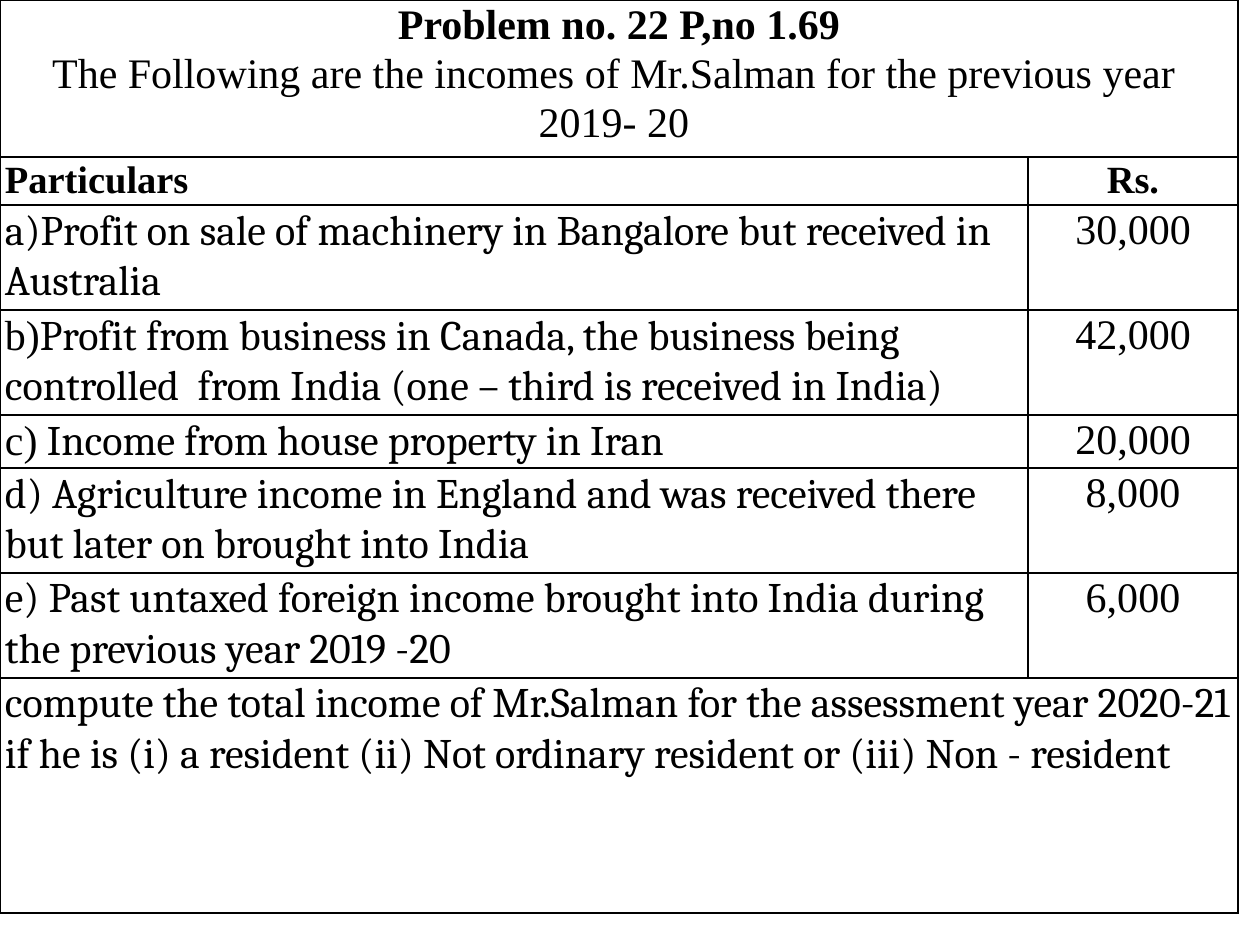
"""Build a slide with an income tax problem set out as a ruled table."""
from dataclasses import dataclass

from lxml import etree
from pptx import Presentation
from pptx.dml.color import RGBColor
from pptx.enum.text import PP_ALIGN
from pptx.oxml.ns import qn
from pptx.util import Pt

LEFT, CENTER = PP_ALIGN.LEFT, PP_ALIGN.CENTER
SCALE = 914400 / 126
COLORS = {"ink": "000000", "paper": "FFFFFF"}
TIMES, CAMBRIA = "Times New Roman", "Cambria"
COLS = (1028, 210)
PAD = 5


@dataclass
class Line:
    text: str
    face: str = TIMES
    size: int = 24
    bold: bool = False
    align: PP_ALIGN = LEFT
    mark: str = ""


@dataclass
class Row:
    high: int
    cells: list[list[Line]]


def px(count: int) -> int:
    return round(count * SCALE)


def item(high: int, text: str, total: str, mark: str = "") -> Row:
    return Row(high, [[Line(text, CAMBRIA, mark=mark)],
                      [Line(total, align=CENTER)]])


ROWS = [
    Row(157, [[
        Line("Problem no. 22 P,no 1.69", bold=True, align=CENTER),
        Line("The Following are the incomes of Mr.Salman for the previous year ",
             align=CENTER),
        Line("2019- 20 ", align=CENTER),
    ]]),
    Row(48, [[Line("Particulars", size=22, bold=True)],
             [Line("Rs.", size=22, bold=True, align=CENTER)]]),
    item(105, "a)Profit on sale of machinery in Bangalore but received in "
              "Australia", "30,000"),
    item(105, "Profit from business in Canada, the business being controlled  "
              "from India (one – third is received in India)", "42,000", "b)"),
    item(53, " Income from house property in Iran", "20,000", "c)"),
    item(105, "d) Agriculture income in England and was received there but "
              "later on brought into India", "8,000"),
    item(105, "e) Past untaxed foreign income brought into India during the "
              "previous year 2019 -20", "6,000"),
    Row(235, [[Line(
        "compute the total income of Mr.Salman for the assessment year 2020-21 "
        "if he is (i) a resident (ii) Not ordinary resident or "
        "(iii) Non - resident", CAMBRIA)]]),
]


def frame(cell) -> None:
    props = cell._tc.get_or_add_tcPr()
    for side in ("lnL", "lnR", "lnT", "lnB"):
        edge = etree.SubElement(props, qn(f"a:{side}"), w=str(Pt(1)))
        fill = etree.SubElement(edge, qn("a:solidFill"))
        etree.SubElement(fill, qn("a:srgbClr"), val=COLORS["ink"])
    cell.fill.solid()
    cell.fill.fore_color.rgb = RGBColor.from_string(COLORS["paper"])
    cell.margin_left = cell.margin_right = px(PAD)
    cell.margin_top = cell.margin_bottom = 0


def write(para, line: Line) -> None:
    para.alignment = line.align
    para.line_spacing = 1.05
    font = para.font
    font.size, font.bold = Pt(line.size), line.bold
    font.color.rgb = RGBColor.from_string(COLORS["ink"])
    if line.mark:
        for text, face in ((line.mark, TIMES), (line.text, line.face)):
            run = para.add_run()
            run.text, run.font.name = text, face
    else:
        para.add_run().text = line.text
        font.name = line.face


def fill_cell(cell, lines: list[Line]) -> None:
    for i, line in enumerate(lines):
        body = cell.text_frame
        write(body.add_paragraph() if i else body.paragraphs[0], line)


def draw_table(slide, rows: list[Row]) -> None:
    shape = slide.shapes.add_table(
        len(rows), len(COLS), 0, 0,
        px(sum(COLS)), px(sum(row.high for row in rows)))
    table = shape.table
    table.first_row = table.horz_banding = False
    for col, wide in zip(table.columns, COLS):
        col.width = px(wide)
    for i, row in enumerate(rows):
        table.rows[i].height = px(row.high)
        for j in range(len(COLS)):
            frame(table.cell(i, j))
        if len(row.cells) == 1:
            table.cell(i, 0).merge(table.cell(i, len(COLS) - 1))
        for j, lines in enumerate(row.cells):
            fill_cell(table.cell(i, j), lines)


def main() -> None:
    deck = Presentation()
    deck.slide_width, deck.slide_height = px(1260), px(945)
    slide = deck.slides.add_slide(deck.slide_layouts[6])
    draw_table(slide, ROWS)
    deck.save("out.pptx")


if __name__ == "__main__":
    main()
